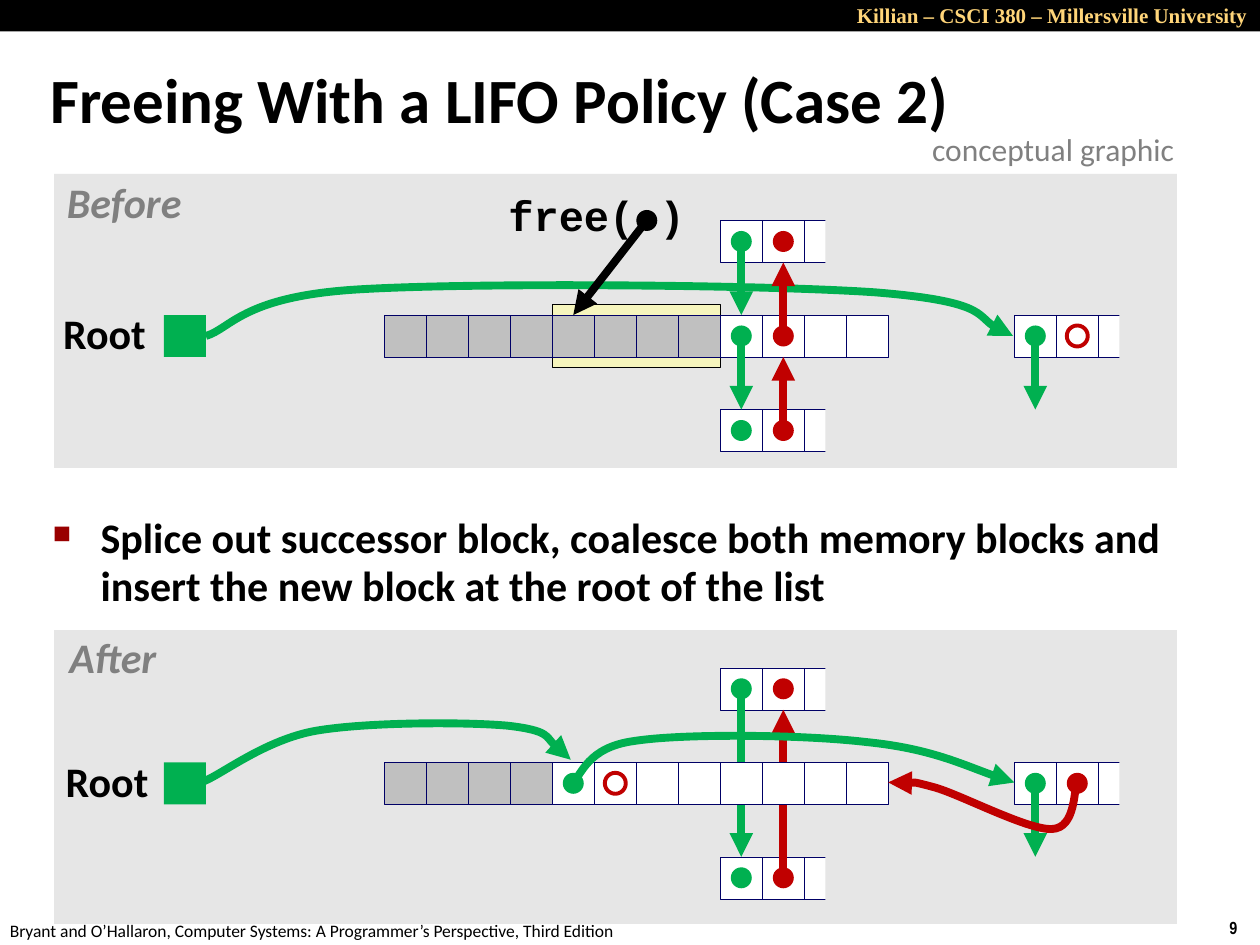
from lxml import etree
from pptx import Presentation
from pptx import util as u
from pptx.dml.color import RGBColor
from pptx.enum import shapes, text
from pptx.oxml import ns

BLACK = RGBColor(0x00, 0x00, 0x00)
WHITE = RGBColor(0xFF, 0xFF, 0xFF)
PANEL = RGBColor(0xE6, 0xE6, 0xE6)
ALLOCATED = RGBColor(0xC0, 0xC0, 0xC0)
FREED = RGBColor(0xF6, 0xF5, 0xBD)
OUTLINE = RGBColor(0x00, 0x00, 0x66)
GREEN = RGBColor(0x00, 0xB0, 0x50)
RED = RGBColor(0xC0, 0x00, 0x00)
GRAY = RGBColor(0x80, 0x80, 0x80)
GOLD = RGBColor(0xFF, 0xD5, 0x79)
BULLET = RGBColor(0x99, 0x00, 0x00)

RECTANGLE = shapes.MSO_SHAPE.RECTANGLE
OVAL = shapes.MSO_SHAPE.OVAL
CELL = u.Inches(1) / 3
COLUMNS, ROWS = 30, 22.5


class HeapSlide:
    """Draws in memory cells, measured from a movable origin."""

    def __init__(self, slide):
        self.slide = slide
        self.origin = (0, 0)

    def point(self, column, row):
        left, top = self.origin
        return round((left + column) * CELL), round((top + row) * CELL)

    def area(self, column, row, width, height):
        return *self.point(column, row), round(width * CELL), round(height * CELL)

    def shape(self, kind, area, fill=None, line=None, weight=0.25):
        shape = self.slide.shapes.add_shape(kind, *self.area(*area))
        shape.shadow.inherit = False
        if fill is None:
            shape.fill.background()
        else:
            shape.fill.solid()
            shape.fill.fore_color.rgb = fill
        if line is None:
            shape.line.fill.background()
        else:
            shape.line.color.rgb = line
            shape.line.width = u.Pt(weight)

    def cells(self, column, row, count, fill=WHITE):
        for index in range(count):
            self.shape(RECTANGLE, (column + index, row, 1, 1), fill, OUTLINE)

    def cut_block(self, column, row):
        """A block whose third cell is half covered by the panel colour."""
        self.cells(column, row, 3)
        self.shape(RECTANGLE, (column + 2.5, row - 0.25, 1, 1.5), PANEL)

    def dot(self, column, row, color):
        self.shape(OVAL, (column + 0.25, row + 0.25, 0.5, 0.5), color)

    def ring(self, column, row):
        self.shape(OVAL, (column + 0.25, row + 0.25, 0.5, 0.5), None, RED, 2.25)

    def arrowhead(self, shape, color):
        shape.line.color.rgb = color
        shape.line.width = u.Pt(4.5)
        line = shape.line._get_or_add_ln()
        etree.SubElement(line, ns.qn("a:tailEnd"), type="triangle")

    def arrow(self, start, end, color):
        connector = self.slide.shapes.add_connector(
            shapes.MSO_CONNECTOR.STRAIGHT, *self.point(*start), *self.point(*end))
        self.arrowhead(connector, color)
        etree.SubElement(connector._element.spPr, ns.qn("a:effectLst"))

    def curve(self, points, color):
        start, *rest = [self.point(*point) for point in points]
        builder = self.slide.shapes.build_freeform(*start)
        builder.add_line_segments(rest, close=False)
        shape = builder.convert_to_shape()
        shape.fill.background()
        self.arrowhead(shape, color)
        shape.shadow.inherit = False
        # Join every three line points into one cubic segment
        outline = next(shape._element.iter(ns.qn("a:path")))
        segments = outline.findall(ns.qn("a:lnTo"))
        for first in range(0, len(segments), 3):
            cubic = etree.SubElement(outline, ns.qn("a:cubicBezTo"))
            for segment in segments[first:first + 3]:
                cubic.append(segment[0])
                outline.remove(segment)

    def text(self, area, words, size, color=BLACK, font="Calibri", bold=False, italic=False,
             align=text.PP_ALIGN.LEFT, wrap=False, inset=0.1, spacing=1.0,
             anchor=text.MSO_ANCHOR.TOP):
        frame = self.slide.shapes.add_textbox(*self.area(*area)).text_frame
        frame.word_wrap = wrap
        frame.vertical_anchor = anchor
        frame.margin_left = frame.margin_right = u.Inches(inset)
        frame.margin_top = frame.margin_bottom = u.Inches(0.05)
        paragraph = frame.paragraphs[0]
        paragraph.alignment = align
        paragraph.line_spacing = spacing
        run = paragraph.add_run()
        run.text = words
        run.font.name, run.font.size = font, u.Pt(size)
        run.font.bold, run.font.italic = bold, italic
        run.font.color.rgb = color
        return paragraph

    def label(self, area, words, **style):
        self.text(area, words, 24, bold=True, align=text.PP_ALIGN.CENTER,
                  inset=0.05, spacing=0.9, **style)

    def bullet(self, area, words):
        paragraph = self.text(area, words, 24, bold=True, wrap=True, spacing=0.95)
        paragraph.space_before = u.Pt(4.8)
        properties = paragraph._p.get_or_add_pPr()
        properties.set("marL", str(u.Inches(0.38)))
        properties.set("indent", str(-u.Inches(0.38)))
        color = etree.SubElement(properties, ns.qn("a:buClr"))
        etree.SubElement(color, ns.qn("a:srgbClr"), val=str(BULLET))
        etree.SubElement(properties, ns.qn("a:buSzPct"), val="60000")
        etree.SubElement(properties, ns.qn("a:buChar"), char="■")

    def panel(self, origin, top):
        self.origin = origin
        self.shape(RECTANGLE, (-7.86, top, 26.73, 7), PANEL)

    def neighbours(self):
        """Blocks above, below and to the right, with the root cell."""
        self.cut_block(8, -2.25)
        self.cut_block(8, 2.25)
        self.cut_block(15, 0)
        self.shape(RECTANGLE, (-5.25, 0, 1, 1), GREEN)
        for row in (-2.25, 2.25):
            self.dot(8, row, GREEN)
            self.dot(9, row, RED)
        self.dot(15, 0, GREEN)
        self.arrow((15.5, 0.5), (15.5, 2.25), GREEN)


def main():
    presentation = Presentation()
    presentation.slide_width = round(COLUMNS * CELL)
    presentation.slide_height = round(ROWS * CELL)
    page = HeapSlide(presentation.slides.add_slide(presentation.slide_layouts[6]))

    # Header, footer and headings
    page.shape(RECTANGLE, (0, 0, COLUMNS, 0.75), BLACK)
    page.text((16.5, -0.09, 13.5, 0.9), "Killian – CSCI 380 – Millersville University", 12,
              GOLD, "Times New Roman", bold=True, align=text.PP_ALIGN.RIGHT, wrap=True)
    page.text((28.98, 21.69, 1.02, 0.81), "9", 10, font="Arial Narrow", bold=True)
    page.text((0.9, 1.17, 28.59, 2.58), "Freeing With a LIFO Policy (Case 2)", 36, bold=True,
              wrap=True, spacing=0.87, anchor=text.MSO_ANCHOR.MIDDLE)
    page.text((21.9, 2.94, 6.51, 1.2), "conceptual graphic", 18, GRAY)
    page.bullet((0.96, 12.12, 27.27, 2.58),
                "Splice out successor block, coalesce both memory blocks and "
                "insert the new block at the root of the list")

    # Before: the freed block sits ahead of a free successor
    page.panel((9.15, 7.5), -3.36)
    page.shape(RECTANGLE, (4, -0.25, 4, 1.5), FREED, BLACK, 0.75)
    page.curve([(-4.25, 0.5), (-3.66, 0.33), (-3.39, -0.42), (-0.75, -0.6),
                (1.92, -0.78), (9.03, -0.72), (11.67, -0.54),
                (14.28, -0.33), (14.28, 0.3), (14.97, 0.5)], GREEN)
    page.cells(0, 0, 8, ALLOCATED)
    page.cells(8, 0, 4)
    page.neighbours()
    page.dot(8, 0, GREEN)
    page.dot(9, 0, RED)
    page.ring(16, 0)
    for row in (-1.75, 0.5):
        page.arrow((8.5, row), (8.5, row + 1.75), GREEN)
        page.arrow((9.5, row + 2.25), (9.5, row + 0.5), RED)
    page.label((2.79, -3, 4.53, 1.41), "free( )", font="Courier New")
    page.dot(5.75, -2.75, BLACK)
    page.arrow((6.25, -2.25), (4.5, 0), BLACK)
    page.label((-7.8, -0.18, 2.28, 1.41), "Root")
    page.label((-7.74, -3.3, 3.09, 1.41), "Before", color=GRAY, italic=True)

    # After: one merged block at the root of the list
    page.panel((9.15, 18.15), -3.15)
    page.neighbours()
    page.arrow((9.5, 2.75), (9.5, -1.25), RED)
    page.arrow((8.5, -1.75), (8.5, 2.25), GREEN)
    page.cells(0, 0, 4, ALLOCATED)
    page.cells(4, 0, 8)
    page.dot(4, 0, GREEN)
    page.ring(5, 0)
    page.dot(16, 0, RED)
    page.curve([(4.47, 0.48), (4.71, 0.33), (4.8, -0.36), (5.97, -0.51),
                (7.14, -0.69), (9.99, -0.66), (11.49, -0.48),
                (12.99, -0.33), (14.28, 0.27), (15, 0.48)], GREEN)
    page.curve([(16.5, 0.48), (16.41, 0.66), (16.47, 1.56), (15.9, 1.59),
                (15.33, 1.62), (13.74, 0.78), (13.11, 0.6),
                (12.45, 0.42), (12.24, 0.51), (12, 0.48)], RED)
    page.curve([(-4.29, 0.45), (-3.84, 0.27), (-2.82, -0.54), (-1.62, -0.75),
                (-0.39, -0.96), (1.95, -0.96), (2.94, -0.87),
                (3.96, -0.75), (4.14, -0.24), (4.44, -0.06)], GREEN)
    page.label((-7.74, -0.18, 2.28, 1.41), "Root")
    page.label((-7.68, -3.12, 2.43, 1.41), "After", color=GRAY, italic=True)

    # Source line
    page.origin = (0, 0)
    page.text((-0.06, 21.75, 15.24, 0.81), "Bryant and O’Hallaron, Computer Systems: "
              "A Programmer’s Perspective, Third Edition", 10)
    presentation.save("out.pptx")


if __name__ == "__main__":
    main()
